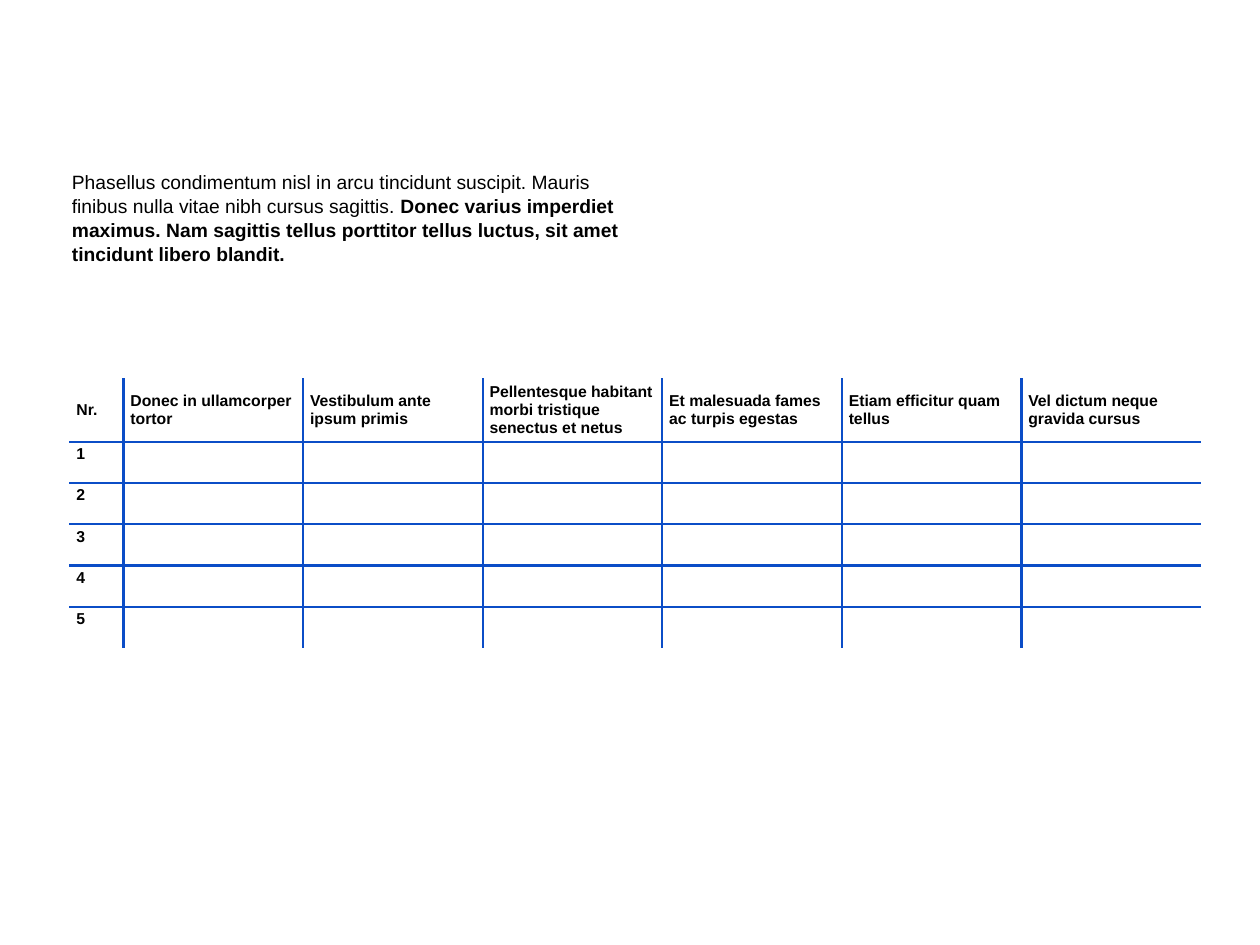
from dataclasses import dataclass

from lxml import etree
from pptx import Presentation
from pptx import util as u
from pptx.dml.color import RGBColor
from pptx.enum import text
from pptx.oxml import ns

BLACK = RGBColor(0x00, 0x00, 0x00)
BLUE = RGBColor(0x0B, 0x4D, 0xC7)
FONT = "Arial"
RULE_WIDTH = u.Pt(1.5)

HEADINGS = [
    "Nr.",
    "Donec in ullamcorper tortor",
    "Vestibulum ante ipsum primis",
    "Pellentesque habitant morbi tristique senectus et netus",
    "Et malesuada fames ac turpis egestas",
    "Etiam efficitur quam tellus",
    "Vel dictum neque gravida cursus",
]
ENTRY_COUNT = 5


@dataclass
class TextPart:
    wording: str
    bold: bool = False


INTRO = [
    TextPart("Phasellus condimentum nisl in arcu tincidunt suscipit. Mauris "
             "finibus nulla vitae nibh cursus sagittis. "),
    TextPart("Donec varius imperdiet maximus. Nam sagittis tellus porttitor "
             "tellus luctus, sit amet tincidunt libero blandit.", bold=True),
]


def format_run(run, size: float, bold: bool) -> None:
    run.font.name = FONT
    run.font.size = u.Pt(size)
    run.font.bold = bold
    run.font.color.rgb = BLACK


def add_intro(slide, parts: list[TextPart]) -> None:
    box = slide.shapes.add_textbox(u.Cm(1.2), u.Cm(3.28), u.Cm(11.86), u.Cm(2.46))
    box.text_frame.word_wrap = True
    paragraph = box.text_frame.paragraphs[0]
    paragraph.line_spacing = 1.04
    for part in parts:
        run = paragraph.add_run()
        run.text = part.wording
        format_run(run, 11, part.bold)


def set_border(cell, side: str, visible: bool) -> None:
    properties = cell._tc.get_or_add_tcPr()
    line = etree.SubElement(properties, ns.qn(f"a:ln{side}"), w=str(RULE_WIDTH))
    if visible:
        fill = etree.SubElement(line, ns.qn("a:solidFill"))
        etree.SubElement(fill, ns.qn("a:srgbClr"), val=str(BLUE))
    else:
        etree.SubElement(line, ns.qn("a:noFill"))


def fill_cell(cell, wording: str, anchor) -> None:
    cell.margin_left = cell.margin_right = u.Cm(0.14)
    cell.margin_top = cell.margin_bottom = u.Cm(0.07)
    cell.vertical_anchor = anchor
    cell.fill.background()
    paragraph = cell.text_frame.paragraphs[0]
    if wording:
        paragraph.text = wording
        format_run(paragraph.runs[0], 9, True)
    else:
        # Small type keeps empty rows at their set height
        paragraph._p.get_or_add_endParaRPr().set("sz", "900")


def add_entry_table(slide) -> None:
    row_count, column_count = ENTRY_COUNT + 1, len(HEADINGS)
    widths = [u.Cm(1.09)] + [u.Cm(3.62)] * (column_count - 1)
    heights = [u.Cm(1.29)] + [u.Cm(0.83)] * ENTRY_COUNT
    frame = slide.shapes.add_table(row_count, column_count, u.Cm(1.4), u.Cm(7.62),
                                   sum(widths), sum(heights))
    table = frame.table
    table.horz_banding = False
    for column, width in zip(table.columns, widths):
        column.width = width
    for row, height in zip(table.rows, heights):
        row.height = height

    numbers = [[str(n)] + [""] * (column_count - 1) for n in range(1, row_count)]
    for r, wordings in enumerate([HEADINGS] + numbers):
        anchor = text.MSO_ANCHOR.TOP if r else text.MSO_ANCHOR.MIDDLE
        for c, wording in enumerate(wordings):
            cell = table.cell(r, c)
            # Only the inner grid lines are drawn
            set_border(cell, "L", c > 0)
            set_border(cell, "R", c < column_count - 1)
            set_border(cell, "T", r > 0)
            set_border(cell, "B", r < row_count - 1)
            fill_cell(cell, wording, anchor)


def main() -> None:
    presentation = Presentation()
    presentation.slide_width, presentation.slide_height = u.Cm(25.4), u.Cm(19.05)
    slide = presentation.slides.add_slide(presentation.slide_layouts[6])
    add_intro(slide, INTRO)
    add_entry_table(slide)
    presentation.save("out.pptx")


if __name__ == "__main__":
    main()
